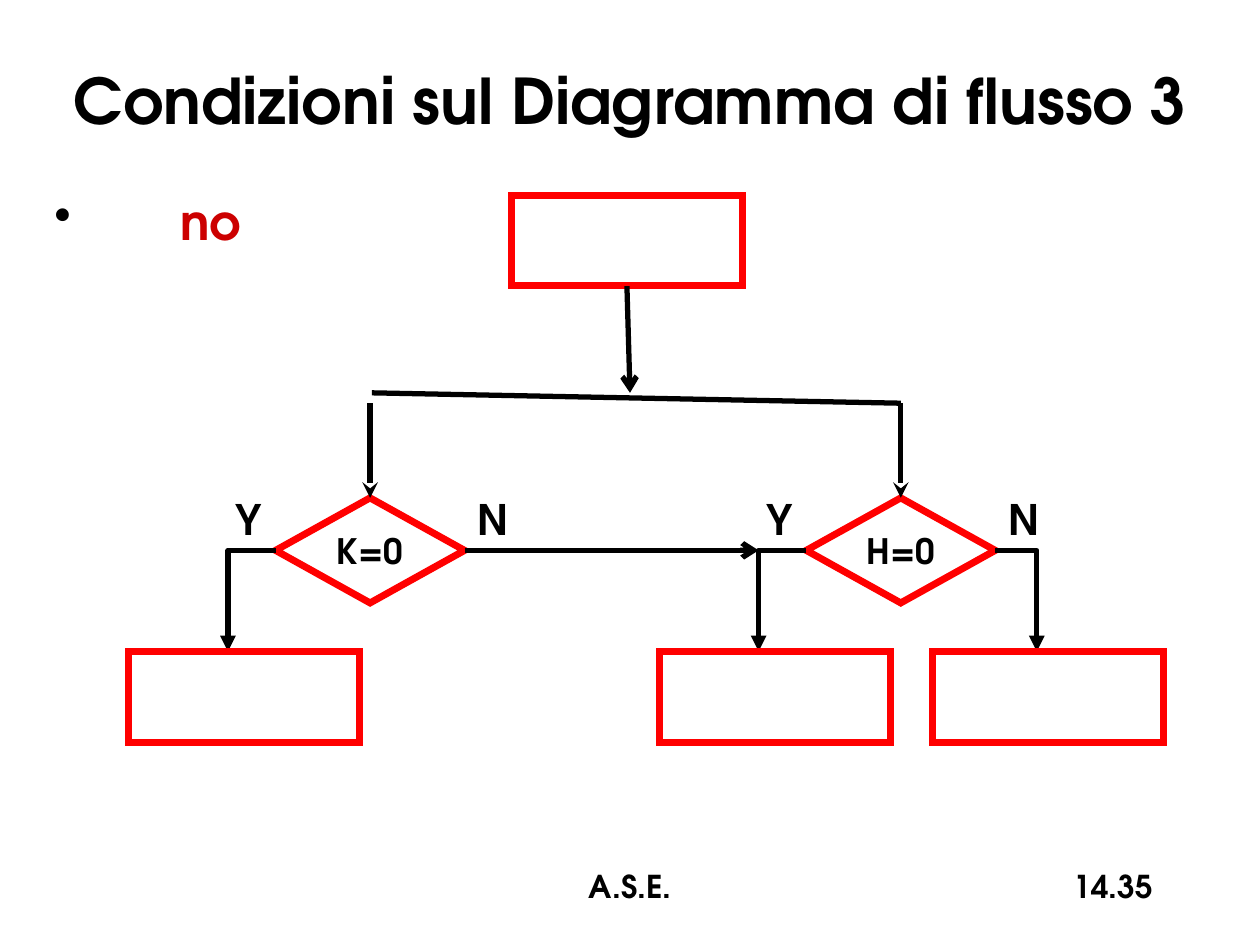
"""Build a flowchart slide with two linked decisions."""
from lxml.etree import SubElement
from pptx import Presentation
from pptx.dml.color import RGBColor
from pptx.enum.shapes import MSO_CONNECTOR, MSO_SHAPE
from pptx.enum.text import MSO_ANCHOR, MSO_AUTO_SIZE, PP_ALIGN
from pptx.oxml.ns import qn
from pptx.util import Pt

FONT = "TeX Gyre Adventor"
BLACK, RED, DARK_RED = "000000", "FF0000", "CC0000"
BOX_W, BOX_H = 132, 52
DIAMOND_W, DIAMOND_H = 108, 60
DECISION_Y, RESULT_Y, SPLIT_Y = 284.5, 372.25, 230.4
MIDDLE_Y = DECISION_Y + DIAMOND_H / 2


def color(value):
    return RGBColor.from_string(value)


def add_run(p, text, size, fill=BLACK):
    r = p.add_run()
    r.text = text
    r.font.name, r.font.size, r.font.bold = FONT, Pt(size), True
    r.font.color.rgb = color(fill)


def write(sp, text, size=18, align=PP_ALIGN.CENTER, anchor=MSO_ANCHOR.TOP, wrap=True):
    tf = sp.text_frame
    tf.word_wrap, tf.vertical_anchor = wrap, anchor
    p = tf.paragraphs[0]
    p.alignment = align
    add_run(p, text, size)
    return tf


def add_text(s, text, x, y, w, h, **fmt):
    return write(s.shapes.add_textbox(Pt(x), Pt(y), Pt(w), Pt(h)), text, **fmt)


def add_label(s, text, x, w):
    tf = add_text(s, text, x, 278.5, w, 36, size=24, wrap=False)
    tf.auto_size = MSO_AUTO_SIZE.SHAPE_TO_FIT_TEXT


def add_bullet(s):
    tf = add_text(s, "\t\t", 24, 106, 696, 372, size=28, align=PP_ALIGN.LEFT)
    p = tf.paragraphs[0]
    add_run(p, "no", 28, DARK_RED)
    p.space_before = Pt(5.6)
    pPr = p._p.get_or_add_pPr()
    pPr.set("marL", str(Pt(27)))
    pPr.set("indent", str(-Pt(27)))
    SubElement(pPr, qn("a:buChar"), char="•")


def add_shape(s, kind, x, y, w, h):
    sp = s.shapes.add_shape(kind, Pt(x), Pt(y), Pt(w), Pt(h))
    sp.shadow.inherit = False
    sp.fill.background()
    sp.line.color.rgb, sp.line.width = color(RED), Pt(4)
    SubElement(sp.line._get_or_add_ln(), qn("a:miter"), lim="800000")
    return sp


def add_box(s, x, y=RESULT_Y):
    return add_shape(s, MSO_SHAPE.RECTANGLE, x, y, BOX_W, BOX_H)


def style_line(sp, head=None):
    sp.line.color.rgb, sp.line.width = color(BLACK), Pt(3)
    if head:
        SubElement(sp.line._get_or_add_ln(), qn("a:tailEnd"), type=head)


def add_line(s, x1, y1, x2, y2, head=None):
    cx = s.shapes.add_connector(MSO_CONNECTOR.STRAIGHT, Pt(x1), Pt(y1), Pt(x2), Pt(y2))
    style_line(cx, head)
    SubElement(cx._element.spPr, qn("a:effectLst"))
    return cx


def add_elbow(s, x1, x2):
    fb = s.shapes.build_freeform(Pt(x1), Pt(MIDDLE_Y))
    fb.add_line_segments([(Pt(x2), Pt(MIDDLE_Y)), (Pt(x2), Pt(RESULT_Y))], close=False)
    sp = fb.convert_to_shape()
    sp.shadow.inherit = False
    sp.fill.background()
    style_line(sp, "triangle")


def add_decision(s, text, x):
    """Draw a decision with its labels, entry arrow and yes branch."""
    center = x + DIAMOND_W / 2
    sp = add_shape(s, MSO_SHAPE.DIAMOND, x, DECISION_Y, DIAMOND_W, DIAMOND_H)
    write(sp, text, size=20, anchor=MSO_ANCHOR.MIDDLE, wrap=False)
    add_line(s, center, SPLIT_Y, center, DECISION_Y, "stealth").end_connect(sp, 0)
    add_label(s, "Y", x - 30, 29.5)
    add_label(s, "N", x + DIAMOND_W, 32.5)
    add_elbow(s, x, x - 27.25)
    add_box(s, x - 84)
    return sp


def main():
    prs = Presentation()
    prs.slide_width, prs.slide_height = Pt(720), Pt(540)
    s = prs.slides.add_slide(prs.slide_layouts[6])
    add_text(s, "Condizioni sul Diagramma di flusso 3", 12, 12, 696, 90,
             size=36, anchor=MSO_ANCHOR.MIDDLE)
    add_bullet(s)

    start = add_box(s, 292.25, 111.5)
    k_x, h_x = 157.5, 460.75
    k_test = add_decision(s, "K=0", k_x)
    add_decision(s, "H=0", h_x)
    add_elbow(s, h_x + DIAMOND_W, 592.5)
    add_box(s, 533)

    add_line(s, k_x + DIAMOND_W, MIDDLE_Y, h_x - 27.25, MIDDLE_Y,
             "arrow").begin_connect(k_test, 3)
    add_line(s, 212.5, 224.5, h_x + DIAMOND_W / 2, SPLIT_Y)
    add_line(s, 358.25, 163.5, 360, 224.5, "arrow").begin_connect(start, 2)

    add_text(s, "14.35", 516, 492, 150, 36, align=PP_ALIGN.RIGHT)
    add_text(s, "A.S.E.", 246, 492, 228, 36)
    prs.save("out.pptx")


if __name__ == "__main__":
    main()
